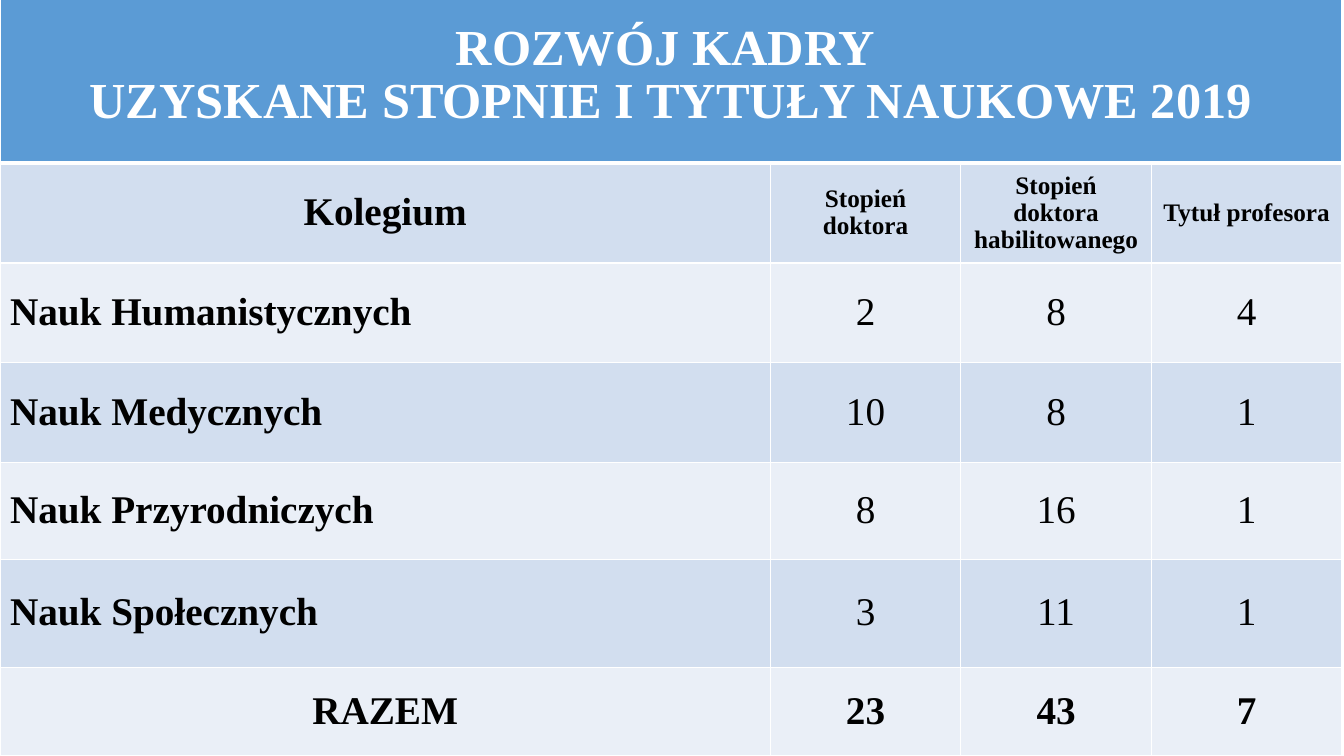
from dataclasses import dataclass

from lxml.etree import SubElement as Sub
from pptx import Presentation
from pptx.dml.color import RGBColor as Rgb
from pptx.enum.text import MSO_ANCHOR as Anchor, PP_ALIGN as Align
from pptx.oxml.ns import qn
from pptx.table import Table, _Cell as Cell
from pptx.util import Inches, Pt


@dataclass(frozen=True)
class Theme:
    font: str = "Times New Roman"
    white: str = "FFFFFF"
    black: str = "000000"
    blue: str = "5B9BD5"
    bands: tuple[str, str] = ("D2DEEF", "EAEFF7")
    title: int = 36
    body: int = 28
    small: int = 18
    pitch: float = 0.96
    thin: int = 1
    thick: int = 3


@dataclass(frozen=True)
class Look:
    size: int
    bold: bool = True
    align: Align = Align.CENTER
    color: str = Theme.black


@dataclass(frozen=True)
class Row:
    label: str
    values: tuple[str, str, str]
    first: Look
    rest: Look


THEME = Theme()
TITLE = Look(THEME.title, color=THEME.white)
HEAD = Look(THEME.body)
SMALL = Look(THEME.small)
NAME = Look(THEME.body, align=Align.LEFT)
COUNT = Look(THEME.body, bold=False)

HEADING = "ROZWÓJ KADRY \nUZYSKANE STOPNIE I TYTUŁY NAUKOWE 2019"
ROWS = (
    Row("Kolegium", ("Stopień doktora", "Stopień doktora habilitowanego", "Tytuł profesora"), HEAD, SMALL),
    Row("Nauk Humanistycznych", ("2", "8", "4"), NAME, COUNT),
    Row("Nauk Medycznych", ("10", "8", "1"), NAME, COUNT),
    Row("Nauk Przyrodniczych", ("8", "16", "1"), NAME, COUNT),
    Row("Nauk Społecznych", ("3", "11", "1"), NAME, COUNT),
    Row("RAZEM", ("23", "43", "7"), HEAD, HEAD),
)
WIDTHS = (7.64, 1.89, 1.89, 1.89)
HEIGHTS = (1.73, 0.99, 0.99, 0.99, 0.96, 1.07, 0.88)


def edge(cell: Cell, top: int, bottom: int) -> None:
    props = cell._tc.get_or_add_tcPr()
    sides = {"lnL": THEME.thin, "lnR": THEME.thin, "lnT": top, "lnB": bottom}
    for spot, (side, width) in enumerate(sides.items()):
        line = Sub(props, qn(f"a:{side}"), w=str(Pt(width)))
        Sub(Sub(line, qn("a:solidFill")), qn("a:srgbClr"), val=THEME.white)
        props.insert(spot, line)


def write(cell: Cell, text: str, look: Look, fill: str) -> None:
    cell.text_frame.text = text
    cell.vertical_anchor = Anchor.MIDDLE
    cell.fill.solid()
    cell.fill.fore_color.rgb = Rgb.from_string(fill)
    for para in cell.text_frame.paragraphs:
        para.alignment = look.align
        para.line_spacing = THEME.pitch
        for run in para.runs:
            run.font.name = THEME.font
            run.font.size = Pt(look.size)
            run.font.bold = look.bold
            run.font.color.rgb = Rgb.from_string(look.color)


def fill_table(table: Table) -> None:
    for col, width in zip(table.columns, WIDTHS):
        col.width = Inches(width)
    for line, height in zip(table.rows, HEIGHTS):
        line.height = Inches(height)
    table.cell(0, 0).merge(table.cell(0, len(WIDTHS) - 1))
    write(table.cell(0, 0), HEADING, TITLE, THEME.blue)
    for num, row in enumerate(ROWS, 1):
        band = THEME.bands[(num - 1) % 2]
        write(table.cell(num, 0), row.label, row.first, band)
        for col, value in enumerate(row.values, 1):
            write(table.cell(num, col), value, row.rest, band)
    for num, line in enumerate(table.rows):
        for cell in line.cells:
            edge(cell, THEME.thick if num == 1 else THEME.thin,
                 THEME.thick if num == 0 else THEME.thin)


def main() -> None:
    deck = Presentation()
    deck.slide_width, deck.slide_height = Inches(13.33), Inches(7.5)
    slide = deck.slides.add_slide(deck.slide_layouts[6])
    frame = slide.shapes.add_table(
        len(HEIGHTS), len(WIDTHS), Inches(0), Inches(-0.11),
        Inches(sum(WIDTHS)), Inches(sum(HEIGHTS)))
    fill_table(frame.table)
    deck.save("out.pptx")


if __name__ == "__main__":
    main()
